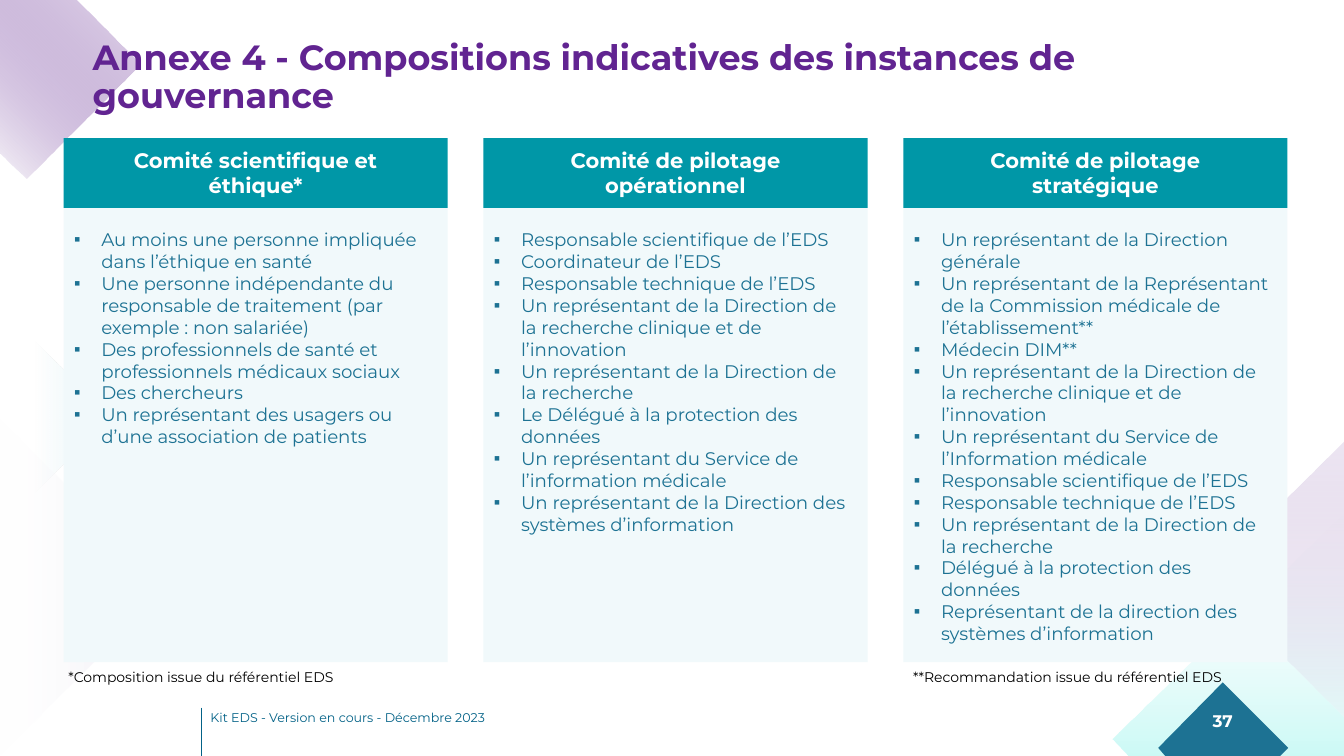
from dataclasses import dataclass

from lxml.etree import SubElement
from pptx import Presentation
from pptx.dml.color import RGBColor
from pptx.enum.shapes import MSO_CONNECTOR, MSO_SHAPE
from pptx.enum.text import MSO_ANCHOR, MSO_AUTO_SIZE, PP_ALIGN
from pptx.oxml import parse_xml
from pptx.oxml.ns import nsdecls, qn
from pptx.util import Inches, Pt

WIDTH, HEIGHT = Inches(13.33), Inches(7.5)


@dataclass(frozen=True)
class Theme:
    """Colours and type sizes of the slide."""
    font: str = "Montserrat"
    purple: str = "612491"
    navy: str = "036287"
    blue: str = "1D7293"
    teal: str = "0097A7"
    panel: str = "F1F9FB"
    white: str = "FFFFFF"
    black: str = "000000"
    lilac: str = "F7F4F9"
    mist: str = "F5F7FC"
    aqua: str = "5DEEE3"
    ice: str = "E7F6F9"
    lavender: str = "E9E6F0"
    title: int = 25
    heading: int = 15
    body: int = 13
    number: int = 12
    note: int = 10
    footer: int = 9


THEME = Theme()


@dataclass(frozen=True)
class Box:
    """A region in percent of the slide's width and height."""
    left: float
    top: float
    width: float
    height: float

    def within(self, left, top, width, height):
        """Return a region given as shares of this one."""
        return Box(self.left + left * self.width, self.top + top * self.height,
                   width * self.width, height * self.height)

    def emu(self):
        """Return left, top, width and height as lengths."""
        return (int(self.left * WIDTH / 100), int(self.top * HEIGHT / 100),
                int(self.width * WIDTH / 100), int(self.height * HEIGHT / 100))


COMMITTEES = [
    ("Comité scientifique et éthique*", 11, [
        "Au moins une personne impliquée dans l’éthique en santé",
        "Une personne indépendante du responsable de traitement (par exemple : non salariée)",
        "Des professionnels de santé et professionnels médicaux sociaux",
        "Des chercheurs",
        "Un représentant des usagers ou d’une association de patients"]),
    ("Comité de pilotage opérationnel", 15, [
        "Responsable scientifique de l’EDS",
        "Coordinateur de l’EDS",
        "Responsable technique de l’EDS",
        "Un représentant de la Direction de la recherche clinique et de l’innovation",
        "Un représentant de la Direction de la recherche",
        "Le Délégué à la protection des données",
        "Un représentant du Service de l’information médicale",
        "Un représentant de la Direction des systèmes d’information"]),
    ("Comité de pilotage stratégique", 20, [
        "Un représentant de la Direction générale",
        "Un représentant de la Représentant de la Commission médicale de l’établissement**",
        "Médecin DIM**",
        "Un représentant de la Direction de la recherche clinique et de l’innovation",
        "Un représentant du Service de l’Information médicale",
        "Responsable scientifique de l’EDS",
        "Responsable technique de l’EDS",
        "Un représentant de la Direction de la recherche",
        "Délégué à la protection des données",
        "Représentant de la direction des systèmes d’information"]),
]

CORNERS = [
    ([(0, 0), (5.63, 0), (10.43, 8.53), (1.95, 23.6), (0, 20.27)],
     [(0, THEME.lilac, 100), (100, THEME.purple, 15)], 315),
    ([(84.08, 100), (100, 100), (100, 67.73), (82.8, 97.6)],
     [(0, THEME.mist, 0), (100, THEME.aqua, 32)], 90),
    ([(86.7, 100), (95.25, 100), (95.85, 98.93), (90.98, 90.27), (86.18, 98.93)],
     [(0, THEME.blue, 100), (100, THEME.blue, 100)], 0),
    ([(100, 58.27), (100, 94.93), (89.7, 76.53)],
     [(0, THEME.purple, 12), (100, THEME.lilac, 32)], 90),
    ([(0, 40.53), (8.25, 55.07), (0, 69.73)],
     [(0, THEME.ice, 100), (69, THEME.ice, 0), (100, THEME.ice, 0)], 180),
    ([(0, 55.33), (12.53, 77.73), (0, 100)],
     [(0, THEME.lavender, 100), (100, THEME.white, 0)], 180),
]


def add_corner(slide, points, stops, angle):
    """Draw a background outline with a translucent gradient."""
    (start_x, start_y), *rest = [(round(x * 100), round(y * 100)) for x, y in points]
    builder = slide.shapes.build_freeform(start_x, start_y, (WIDTH / 10000, HEIGHT / 10000))
    builder.add_line_segments(rest, close=True)
    corner = builder.convert_to_shape()
    corner.shadow.inherit = False
    corner.line.fill.background()
    if stops[0][1:] == stops[-1][1:]:
        corner.fill.solid()
        corner.fill.fore_color.rgb = RGBColor.from_string(stops[0][1])
        return
    corner.fill.background()
    marks = "".join(
        f'<a:gs pos="{pos * 1000}"><a:srgbClr val="{color}">'
        f'<a:alpha val="{alpha * 1000}"/></a:srgbClr></a:gs>'
        for pos, color, alpha in stops)
    gradient = parse_xml(
        f'<a:gradFill {nsdecls("a")} rotWithShape="1"><a:gsLst>{marks}</a:gsLst>'
        f'<a:lin ang="{angle * 60000}" scaled="0"/></a:gradFill>')
    properties = corner._element.spPr
    properties.replace(properties.find(qn("a:noFill")), gradient)


def add_panel(slide, box, color):
    """Draw a plain filled rectangle."""
    panel = slide.shapes.add_shape(MSO_SHAPE.RECTANGLE, *box.emu())
    panel.shadow.inherit = False
    panel.fill.solid()
    panel.fill.fore_color.rgb = RGBColor.from_string(color)
    panel.line.fill.background()


def add_bullet(paragraph):
    """Give a paragraph a hanging square bullet."""
    properties = paragraph._p.get_or_add_pPr()
    properties.set("marL", str(Inches(0.38)))
    properties.set("indent", str(Inches(-0.27)))
    color = SubElement(properties, qn("a:buClr"))
    SubElement(color, qn("a:srgbClr"), val=THEME.blue)
    SubElement(properties, qn("a:buFont"), typeface="Arial")
    SubElement(properties, qn("a:buChar"), char="▪")


def add_text(slide, box, lines, size, color, bold=False, align=PP_ALIGN.LEFT,
             anchor=MSO_ANCHOR.TOP, insets=(0, 0), bullets=False, spacing=None):
    """Write paragraphs of one style in a box."""
    frame = slide.shapes.add_textbox(*box.emu()).text_frame
    frame.word_wrap = True
    frame.auto_size = MSO_AUTO_SIZE.SHAPE_TO_FIT_TEXT if bullets else MSO_AUTO_SIZE.NONE
    frame.vertical_anchor = anchor
    frame.margin_left = frame.margin_right = Inches(insets[0])
    frame.margin_top = frame.margin_bottom = Inches(insets[1])
    for index, line in enumerate(lines):
        paragraph = frame.add_paragraph() if index else frame.paragraphs[0]
        paragraph.text = line
        paragraph.alignment = align
        if spacing:
            paragraph.line_spacing = spacing
        if bullets:
            add_bullet(paragraph)
        paragraph.font.name = THEME.font
        paragraph.font.size = Pt(size)
        paragraph.font.bold = bold
        paragraph.font.color.rgb = RGBColor.from_string(color)


def add_committee(slide, box, heading, rows, members):
    """Place one committee's heading and member list in its column."""
    add_panel(slide, box.within(0, 0.07, 1, 0.93), THEME.panel)
    add_text(slide, box.within(-0.02, 0.165, 1, 0.015 + rows * 0.0417), members,
             THEME.body, THEME.blue, insets=(0.07, 0.04), bullets=True)
    add_panel(slide, box.within(0, 0, 1, 0.133), THEME.teal)
    add_text(slide, box.within(0.06, 0.008, 0.88, 0.115), [heading], THEME.heading, THEME.white,
             True, PP_ALIGN.CENTER, MSO_ANCHOR.MIDDLE, (0.1, 0.1))


def add_footer(slide, box):
    """Place the version text and the upright rule on its left."""
    add_text(slide, box.within(0.02, 0, 0.98, 0.42),
             ["Kit EDS - Version en cours - Décembre 2023"],
             THEME.footer, THEME.navy, anchor=MSO_ANCHOR.MIDDLE)
    left, top, _, height = box.emu()
    rule = slide.shapes.add_connector(MSO_CONNECTOR.STRAIGHT, left, top, left, top + height)
    rule.line.color.rgb = RGBColor.from_string(THEME.navy)
    rule.line.width = Pt(1)
    SubElement(rule._element.spPr, qn("a:effectLst"))


def main():
    """Build the slide and save it."""
    deck = Presentation()
    deck.slide_width, deck.slide_height = WIDTH, HEIGHT
    slide = deck.slides.add_slide(deck.slide_layouts[6])
    for points, stops, angle in CORNERS:
        add_corner(slide, points, stops, angle)
    add_footer(slide, Box(15, 93.6, 33, 6.4))
    add_text(slide, Box(6.9, 5.33, 86.25, 11.33),
             ["Annexe 4 - Compositions indicatives des instances de gouvernance"],
             THEME.title, THEME.purple, True, spacing=0.9)
    for index, committee in enumerate(COMMITTEES):
        add_committee(slide, Box(4.73 + index * 31.24, 18.27, 28.58, 69.33), *committee)
    for left, width, note in [(4.35, 22.58, "*Composition issue du référentiel EDS"),
                              (67.2, 26.25, "**Recommandation issue du référentiel EDS")]:
        add_text(slide, Box(left, 87.07, width, 5.33), [note], THEME.note, THEME.black,
                 insets=(0.1, 0.1))
    add_text(slide, Box(88.88, 92.67, 4.2, 5.33), ["37"], THEME.number, THEME.white, True,
             PP_ALIGN.CENTER, MSO_ANCHOR.MIDDLE, (0.1, 0.05))
    deck.save("out.pptx")


if __name__ == "__main__":
    main()
